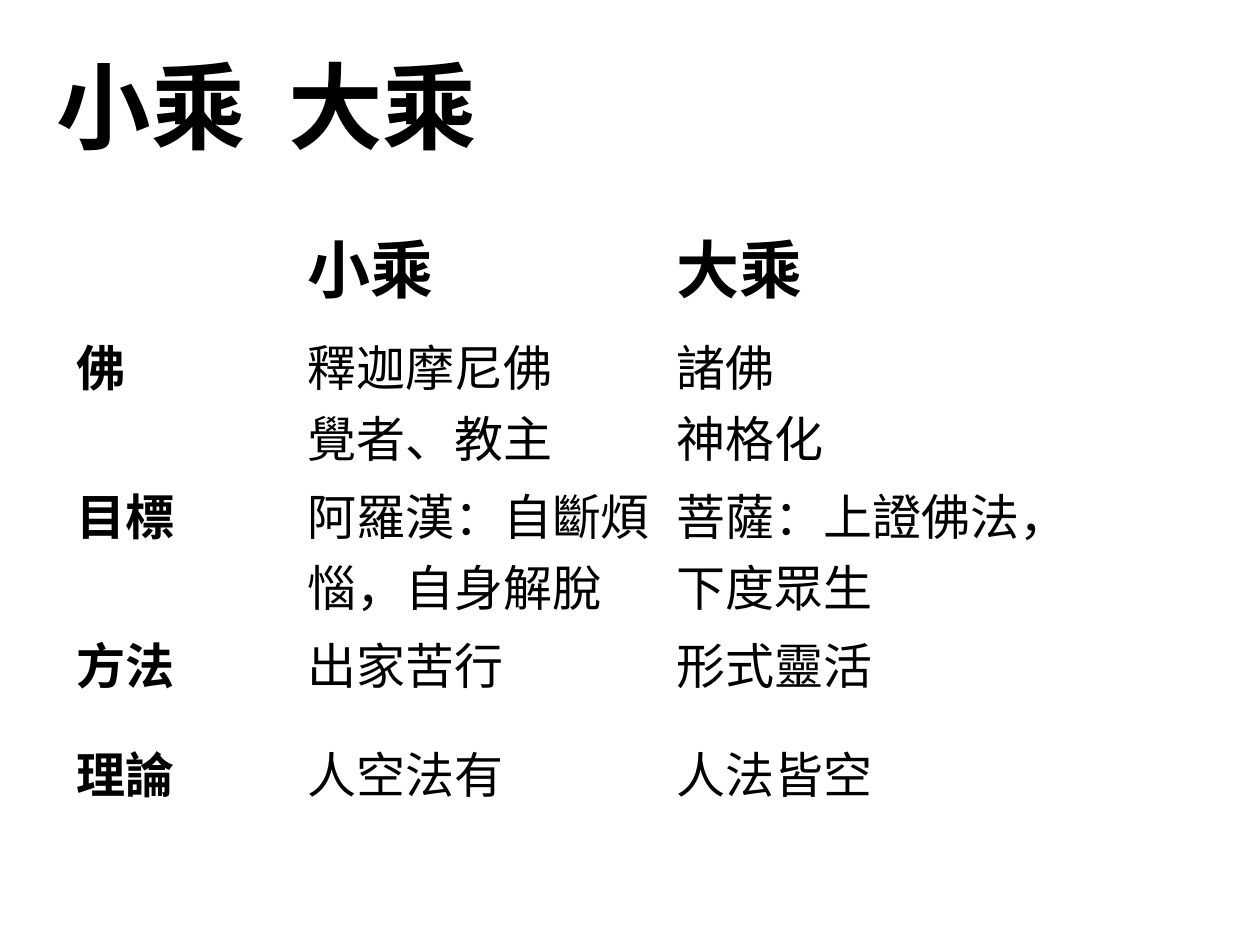
from lxml import etree
from pptx import Presentation
from pptx.dml.color import RGBColor
from pptx.enum.text import MSO_ANCHOR, PP_ALIGN
from pptx.oxml.ns import qn
from pptx.util import Inches, Pt

MIDDLE, TOP, LEFT = MSO_ANCHOR.MIDDLE, MSO_ANCHOR.TOP, PP_ALIGN.LEFT
LATIN, CJK, INK = "DejaVu Sans", "Noto Sans CJK SC", "000000"
COLS = [1.83, 2.93, 3.66]
ROWS = [0.87, 1.18, 1.18, 0.87, 0.87]
CONTENT = [
    ["", "小乘", "大乘"],
    ["佛", "釋迦摩尼佛\n覺者、教主", "諸佛\n神格化"],
    ["目標", "阿羅漢：自斷煩惱，自身解脫", "菩薩：上證佛法，下度眾生"],
    ["方法", "出家苦行", "形式靈活"],
    ["理論", "人空法有", "人法皆空"],
]


def color(value):
    """Return a colour from its hex string."""
    return RGBColor.from_string(value)


def write(tf, text, **formats):
    """Write one paragraph per line with the given font values."""
    tf.text = text
    for p in tf.paragraphs:
        p.alignment = LEFT
        for r in p.runs:
            for name, value in formats.items():
                setattr(r.font, name, value)
            r.font.color.rgb = color(INK)
            etree.SubElement(r.font._element, qn("a:ea"), typeface=CJK)


def add_title(s, text):
    """Add the slide title."""
    sp = s.shapes.add_textbox(*map(Inches, (0.35, 0.52, 7.92, 0.62)))
    tf = sp.text_frame
    tf.word_wrap = True
    tf.vertical_anchor = MIDDLE
    write(tf, text, name=LATIN, size=Pt(54), bold=True)


def add_comparison(s):
    """Add the plain table with bold headings and row labels."""
    x, y, cx, cy = map(Inches, (0.51, 1.7, sum(COLS), sum(ROWS)))
    table = s.shapes.add_table(len(ROWS), len(COLS), x, y, cx, cy).table
    table.first_row = table.horz_banding = False
    for column, width in zip(table.columns, COLS):
        column.width = Inches(width)
    for i, (row, height) in enumerate(zip(table.rows, ROWS)):
        row.height = Inches(height)
        for j, cell in enumerate(row.cells):
            cell.fill.background()
            cell.vertical_anchor = TOP
            write(cell.text_frame, CONTENT[i][j], name=CJK,
                  size=Pt(28 if i else 36), bold=i == 0 or j == 0)


def main():
    """Build and save the slide."""
    prs = Presentation()
    prs.slide_width, prs.slide_height = Inches(10), Inches(7.5)
    s = prs.slides.add_slide(prs.slide_layouts[6])
    add_title(s, "小乘  大乘")
    add_comparison(s)
    prs.save("out.pptx")


if __name__ == "__main__":
    main()
